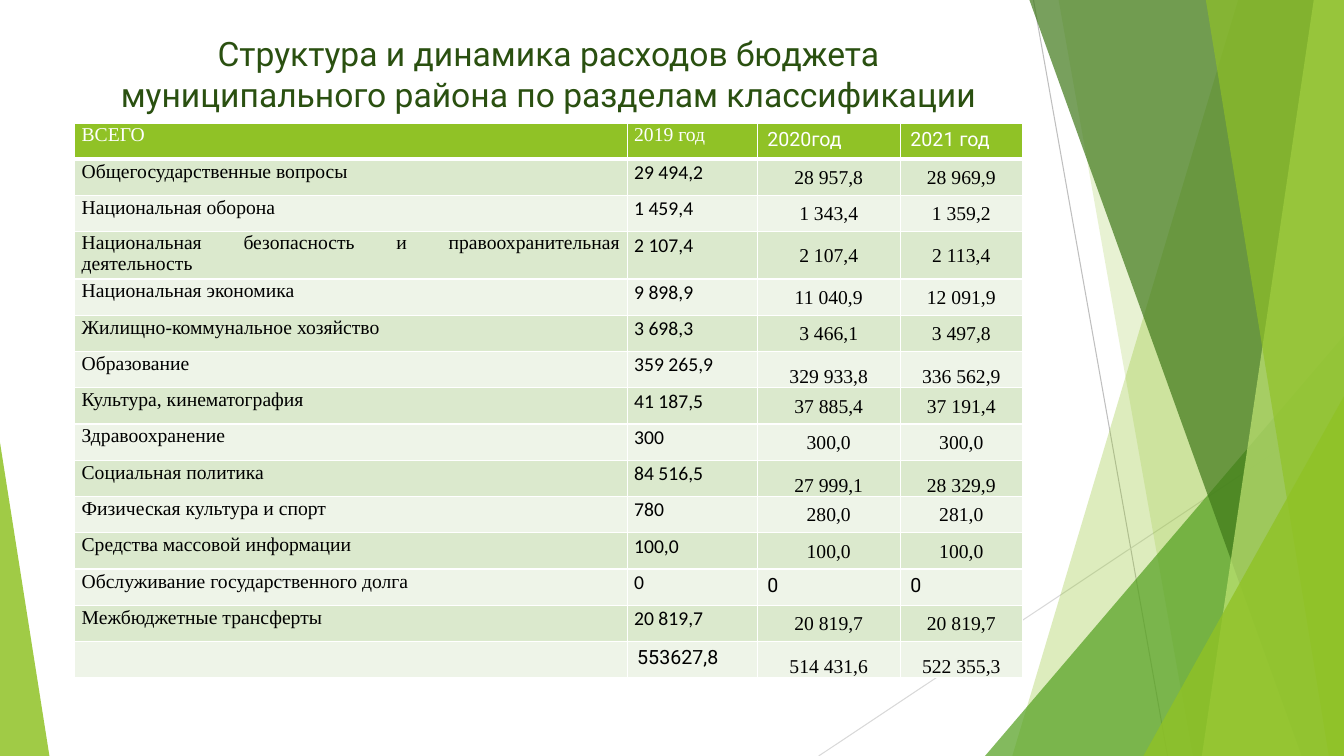
from dataclasses import dataclass

from lxml import etree
from pptx import Presentation
from pptx import util as u
from pptx.dml import color as c
from pptx.enum import shapes, text
from pptx.oxml import ns

WIDTH, HEIGHT = 13.33, 7.5


@dataclass(frozen=True)
class Theme:
    green: str = "90C226"
    leaf: str = "54A021"
    forest: str = "3F7819"
    lime: str = "C0E474"
    title: str = "2A5010"
    body: str = "000000"
    white: str = "FFFFFF"
    stripes: tuple[str, str] = ("EEF4E8", "DBE9CD")
    sans: str = "Roboto"
    serif: str = "Times New Roman"
    figures: str = "Calibri"
    title_size: int = 24
    table_size: int = 14


THEME = Theme()


@dataclass(frozen=True)
class Ray:
    start: tuple[float, float]
    end: tuple[float, float]
    color: str


@dataclass(frozen=True)
class Band:
    """Full-height area from a slanted left edge to the right side of the slide."""
    top_x: float
    bottom_x: float
    color: str
    opacity: int


@dataclass(frozen=True)
class Corner:
    """Right triangle standing on the bottom edge; apex is 0 (left) or 1 (right)."""
    left: float
    width: float
    height: float
    apex: int
    color: str
    opacity: int


@dataclass(frozen=True)
class CellStyle:
    font: str
    align: text.PP_ALIGN = text.PP_ALIGN.LEFT
    anchor: text.MSO_ANCHOR = text.MSO_ANCHOR.TOP
    spacing: float = 1.0
    margins: tuple[float, float, float, float] = (0.1, 0.05, 0.1, 0.05)


@dataclass(frozen=True)
class Row:
    values: tuple[str, str, str, str]
    styles: tuple[CellStyle, ...]


TIGHT, THIN = (0.07, 0, 0.07, 0), (0.01, 0.01, 0.01, 0)
LABEL = CellStyle(THEME.serif, text.PP_ALIGN.JUSTIFY, spacing=1.07, margins=TIGHT)
LONG_LABEL = CellStyle(THEME.serif, text.PP_ALIGN.JUSTIFY, margins=TIGHT)
AMOUNT = CellStyle(THEME.figures, spacing=1.07, margins=TIGHT)
PLAIN = CellStyle(THEME.sans)
PLAN = CellStyle(THEME.serif, text.PP_ALIGN.CENTER, text.MSO_ANCHOR.MIDDLE, margins=THIN)
LOW_PLAN = CellStyle(THEME.serif, text.PP_ALIGN.CENTER, text.MSO_ANCHOR.BOTTOM, margins=THIN)

HEADER = (LABEL, LABEL, PLAIN, PLAIN)
MIDDLE = (LABEL, AMOUNT, PLAN, PLAN)
LONG = (LONG_LABEL, AMOUNT, PLAN, PLAN)
LOW = (LABEL, AMOUNT, LOW_PLAN, LOW_PLAN)
ZERO = (LABEL, AMOUNT, PLAIN, PLAIN)
TOTAL = (LABEL, PLAIN, LOW_PLAN, LOW_PLAN)

TITLE = "Структура и динамика расходов бюджета муниципального района по разделам классификации"
COLUMNS = (5.48, 1.29, 1.42, 1.21)
ROW_HEIGHT = 0.36
ROWS = (
    Row(("ВСЕГО", "2019 год", "2020год", "2021 год"), HEADER),
    Row(("Общегосударственные вопросы", "29 494,2", "28 957,8", "28 969,9"), MIDDLE),
    Row(("Национальная оборона", "1 459,4", "1 343,4", "1 359,2"), MIDDLE),
    Row(("Национальная безопасность и правоохранительная деятельность",
         "2 107,4", "2 107,4", "2 113,4"), LONG),
    Row(("Национальная экономика", "9 898,9", "11 040,9", "12 091,9"), MIDDLE),
    Row(("Жилищно-коммунальное хозяйство", "3 698,3", "3 466,1", "3 497,8"), MIDDLE),
    Row(("Образование", "359 265,9", "329 933,8", "336 562,9"), LOW),
    Row(("Культура, кинематография", "41 187,5", "37 885,4", "37 191,4"), MIDDLE),
    Row(("Здравоохранение", "300", "300,0", "300,0"), MIDDLE),
    Row(("Социальная политика", "84 516,5", "27 999,1", "28 329,9"), LOW),
    Row(("Физическая культура и спорт", "780", "280,0", "281,0"), MIDDLE),
    Row(("Средства массовой информации", "100,0", "100,0", "100,0"), MIDDLE),
    Row(("Обслуживание государственного долга", "0", "0", "0"), ZERO),
    Row(("Межбюджетные трансферты", "20 819,7", "20 819,7", "20 819,7"), MIDDLE),
    Row(("", "553627,8", "514 431,6", "522 355,3"), TOTAL),
)

RAYS = (
    Ray((10.25, 0), (11.58, HEIGHT), "BFBFBF"),
    Ray((WIDTH, 4.03), (8.12, HEIGHT), "D9D9D9"),
)
FACETS = (
    Band(12.28, 10.04, THEME.green, 30),
    Band(10.5, 11.83, THEME.green, 20),
    Corner(9.77, 3.56, 4.17, 1, THEME.leaf, 72),
    Band(10.21, 12.91, THEME.forest, 70),
    Band(13.03, 11.92, THEME.lime, 70),
    Band(11.96, 13.18, THEME.green, 65),
    Corner(11.34, 1.99, 3.57, 1, THEME.green, 80),
    Corner(0, 0.49, 3.11, 0, THEME.green, 85),
)


def draw_ray(page, ray: Ray) -> None:
    line = page.shapes.add_connector(
        shapes.MSO_CONNECTOR.STRAIGHT, *map(u.Inches, ray.start + ray.end))
    line.line.color.rgb = c.RGBColor.from_string(ray.color)
    line.line.width = u.Pt(0.75)
    etree.SubElement(line._element.spPr, ns.qn("a:effectLst"))


def draw_facet(page, facet: Band | Corner) -> None:
    if isinstance(facet, Band):
        outline = page.shapes.build_freeform(u.Inches(facet.top_x), 0)
        corners = ((WIDTH, 0), (WIDTH, HEIGHT), (facet.bottom_x, HEIGHT))
        outline.add_line_segments([(u.Inches(x), u.Inches(y)) for x, y in corners])
        shape = outline.convert_to_shape()
    else:
        box = (facet.left, HEIGHT - facet.height, facet.width, facet.height)
        shape = page.shapes.add_shape(
            shapes.MSO_SHAPE.ISOSCELES_TRIANGLE, *map(u.Inches, box))
        shape.adjustments[0] = facet.apex
    shape.shadow.inherit = False
    shape.line.fill.background()
    shape.fill.solid()
    shape.fill.fore_color.rgb = c.RGBColor.from_string(facet.color)
    tint = shape._element.spPr.find(".//" + ns.qn("a:srgbClr"))
    etree.SubElement(tint, ns.qn("a:alpha"), val=str(facet.opacity * 1000))


def write(para, words: str, font: str, size: int, color: str) -> None:
    para.text = words
    for span in para.runs:
        span.font.name = font
        span.font.size = u.Pt(size)
        span.font.color.rgb = c.RGBColor.from_string(color)


def draw_title(page) -> None:
    box = page.shapes.add_textbox(*map(u.Inches, (0.74, 0.28, 9.4, 1.07)))
    box.text_frame.word_wrap = True
    para = box.text_frame.paragraphs[0]
    para.alignment = text.PP_ALIGN.CENTER
    write(para, TITLE, THEME.sans, THEME.title_size, THEME.title)


def add_borders(cell, header: bool) -> None:
    """White rules; only the header has a top rule, and its bottom one is thicker."""
    widths = {"lnL": 1, "lnR": 1, "lnT": 1, "lnB": 3} if header else {"lnL": 1, "lnR": 1, "lnB": 1}
    properties = cell._tc.get_or_add_tcPr()
    for side, width in widths.items():
        rule = etree.SubElement(properties, ns.qn(f"a:{side}"), w=str(u.Pt(width)))
        fill = etree.SubElement(rule, ns.qn("a:solidFill"))
        etree.SubElement(fill, ns.qn("a:srgbClr"), val=THEME.white)


def fill_cell(cell, words: str, style: CellStyle, row_index: int) -> None:
    header = row_index == 0
    add_borders(cell, header)
    cell.fill.solid()
    fill = THEME.green if header else THEME.stripes[row_index % 2]
    cell.fill.fore_color.rgb = c.RGBColor.from_string(fill)
    cell.margin_left, cell.margin_top, cell.margin_right, cell.margin_bottom = map(
        u.Inches, style.margins)
    cell.vertical_anchor = style.anchor
    para = cell.text_frame.paragraphs[0]
    para.alignment = style.align
    para.line_spacing = style.spacing
    write(para, words, style.font, THEME.table_size, THEME.white if header else THEME.body)


def draw_table(page) -> None:
    place = (0.74, 1.22, sum(COLUMNS), ROW_HEIGHT * len(ROWS))
    table = page.shapes.add_table(len(ROWS), len(COLUMNS), *map(u.Inches, place)).table
    table.first_row = table.horz_banding = False
    for column, width in zip(table.columns, COLUMNS):
        column.width = u.Inches(width)
    for i, row in enumerate(ROWS):
        table.rows[i].height = u.Inches(ROW_HEIGHT)
        for j, (words, style) in enumerate(zip(row.values, row.styles)):
            fill_cell(table.cell(i, j), words, style, i)


def main() -> None:
    deck = Presentation()
    deck.slide_width, deck.slide_height = u.Inches(WIDTH), u.Inches(HEIGHT)
    page = deck.slides.add_slide(deck.slide_layouts[6])
    for ray in RAYS:
        draw_ray(page, ray)
    for facet in FACETS:
        draw_facet(page, facet)
    draw_title(page)
    draw_table(page)
    deck.save("out.pptx")


if __name__ == "__main__":
    main()
